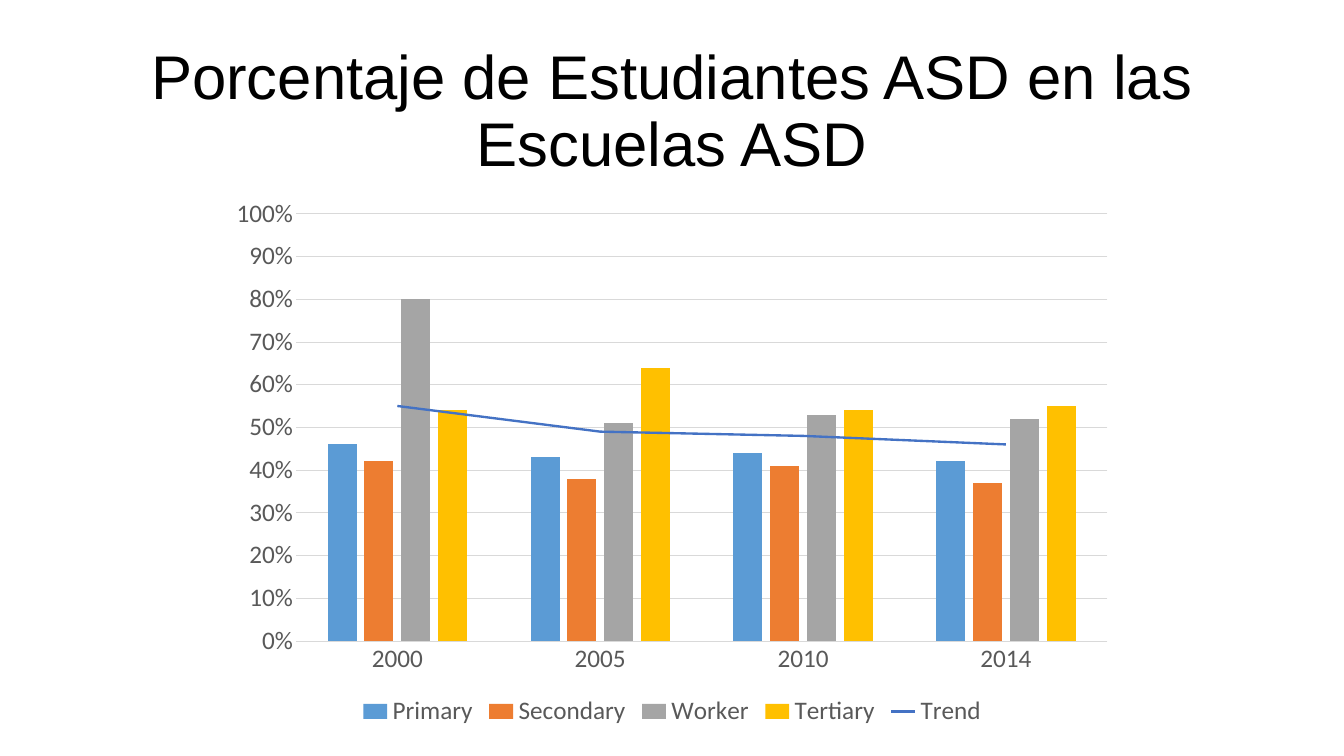
from dataclasses import dataclass

from lxml.etree import SubElement
from pptx import Presentation
from pptx.chart.chart import Chart
from pptx.chart.data import CategoryChartData
from pptx.dml.color import RGBColor
from pptx.enum.chart import XL_CHART_TYPE, XL_LEGEND_POSITION, XL_MARKER_STYLE, XL_TICK_MARK
from pptx.enum.text import MSO_ANCHOR, MSO_AUTO_SIZE, PP_ALIGN
from pptx.oxml.ns import qn
from pptx.slide import Slide
from pptx.text.text import Font
from pptx.util import Cm, Pt


@dataclass(frozen=True)
class Theme:
    title_font: str = "Arial"
    chart_font: str = "Calibri"
    title_size: float = 58.7
    label_size: int = 24
    title_color: str = "000000"
    label_color: str = "595959"
    grid_color: str = "D9D9D9"
    grid_width: float = 0.75
    trend_width: float = 2.25


@dataclass(frozen=True)
class Level:
    name: str
    shares: tuple[float, ...]
    color: str


THEME = Theme()
YEARS = ("2000", "2005", "2010", "2014")
LEVELS = (
    Level("Primary", (0.46, 0.43, 0.44, 0.42), "5B9BD5"),
    Level("Secondary", (0.42, 0.38, 0.41, 0.37), "ED7D31"),
    Level("Worker", (0.80, 0.51, 0.53, 0.52), "A5A5A5"),
    Level("Tertiary", (0.54, 0.64, 0.54, 0.55), "FFC000"),
)
TREND = Level("Trend", (0.55, 0.49, 0.48, 0.46), "4472C4")


def style_font(font: Font, name: str, size: float, color: str) -> None:
    font.name = name
    font.size = Pt(size)
    font.color.rgb = RGBColor.from_string(color)


def add_title(slide: Slide, wording: str) -> None:
    title = slide.shapes.title
    title.left, title.top, title.width, title.height = Cm(3.1), Cm(1.35), Cm(38.94), Cm(4.9)
    frame = title.text_frame
    frame.text = wording
    frame.word_wrap = True
    frame.auto_size = MSO_AUTO_SIZE.NONE
    frame.vertical_anchor = MSO_ANCHOR.MIDDLE
    frame.margin_left = frame.margin_right = Cm(0.41)
    frame.margin_top = frame.margin_bottom = Cm(0.2)
    paragraph = frame.paragraphs[0]
    paragraph.alignment = PP_ALIGN.CENTER
    paragraph.line_spacing = 0.9
    paragraph.space_before = Pt(0)
    style_font(paragraph.font, THEME.title_font, THEME.title_size, THEME.title_color)


def move_last_series_to_line(chart: Chart) -> None:
    """Turn the last column series into a line on the same axes."""
    bar_chart = chart.plots[0].series[0]._element.getparent()
    trend = bar_chart.findall(qn("c:ser"))[-1]
    line_chart = bar_chart.makeelement(qn("c:lineChart"))
    bar_chart.addnext(line_chart)
    SubElement(line_chart, qn("c:grouping"), val="standard")
    SubElement(line_chart, qn("c:varyColors"), val="0")
    for column_setting in trend.findall(qn("c:invertIfNegative")):
        trend.remove(column_setting)
    line_chart.append(trend)
    SubElement(line_chart, qn("c:marker"), val="1")
    for axis_id in bar_chart.findall(qn("c:axId")):
        SubElement(line_chart, qn("c:axId"), val=axis_id.get("val"))


def style_axes(chart: Chart) -> None:
    years, shares = chart.category_axis, chart.value_axis
    for axis in (years, shares):
        axis.major_tick_mark = axis.minor_tick_mark = XL_TICK_MARK.NONE
        style_font(axis.tick_labels.font, THEME.chart_font, THEME.label_size, THEME.label_color)
    shares.minimum_scale, shares.maximum_scale, shares.major_unit = 0, 1, 0.1
    shares.tick_labels.number_format = "0%"
    shares.tick_labels.number_format_is_linked = False
    shares.format.line.fill.background()
    for line in (years.format.line, shares.major_gridlines.format.line):
        line.color.rgb = RGBColor.from_string(THEME.grid_color)
        line.width = Pt(THEME.grid_width)


def add_share_chart(slide: Slide) -> None:
    data = CategoryChartData(number_format="0%")
    data.categories = YEARS
    for level in (*LEVELS, TREND):
        data.add_series(level.name, level.shares)
    chart = slide.shapes.add_chart(
        XL_CHART_TYPE.COLUMN_CLUSTERED, Cm(7.34), Cm(6.3), Cm(30.48), Cm(18.29), data
    ).chart
    chart.has_title = False
    style_font(chart.font, THEME.chart_font, THEME.label_size, THEME.label_color)
    move_last_series_to_line(chart)

    columns, trend_plot = chart.plots
    columns.vary_by_categories = False
    columns.gap_width, columns.overlap = 219, -27
    for series, level in zip(columns.series, LEVELS):
        series.format.fill.solid()
        series.format.fill.fore_color.rgb = RGBColor.from_string(level.color)

    trend = trend_plot.series[0]
    trend.smooth = False
    trend.marker.style = XL_MARKER_STYLE.NONE
    trend.format.line.color.rgb = RGBColor.from_string(TREND.color)
    trend.format.line.width = Pt(THEME.trend_width)

    style_axes(chart)
    chart.has_legend = True
    chart.legend.position = XL_LEGEND_POSITION.BOTTOM
    chart.legend.include_in_layout = False
    style_font(chart.legend.font, THEME.chart_font, THEME.label_size, THEME.label_color)


def main() -> None:
    deck = Presentation()
    deck.slide_width, deck.slide_height = Cm(45.16), Cm(25.4)
    slide = deck.slides.add_slide(deck.slide_layouts[5])
    add_title(slide, "Porcentaje de Estudiantes ASD en las Escuelas ASD")
    add_share_chart(slide)
    deck.save("out.pptx")


if __name__ == "__main__":
    main()
